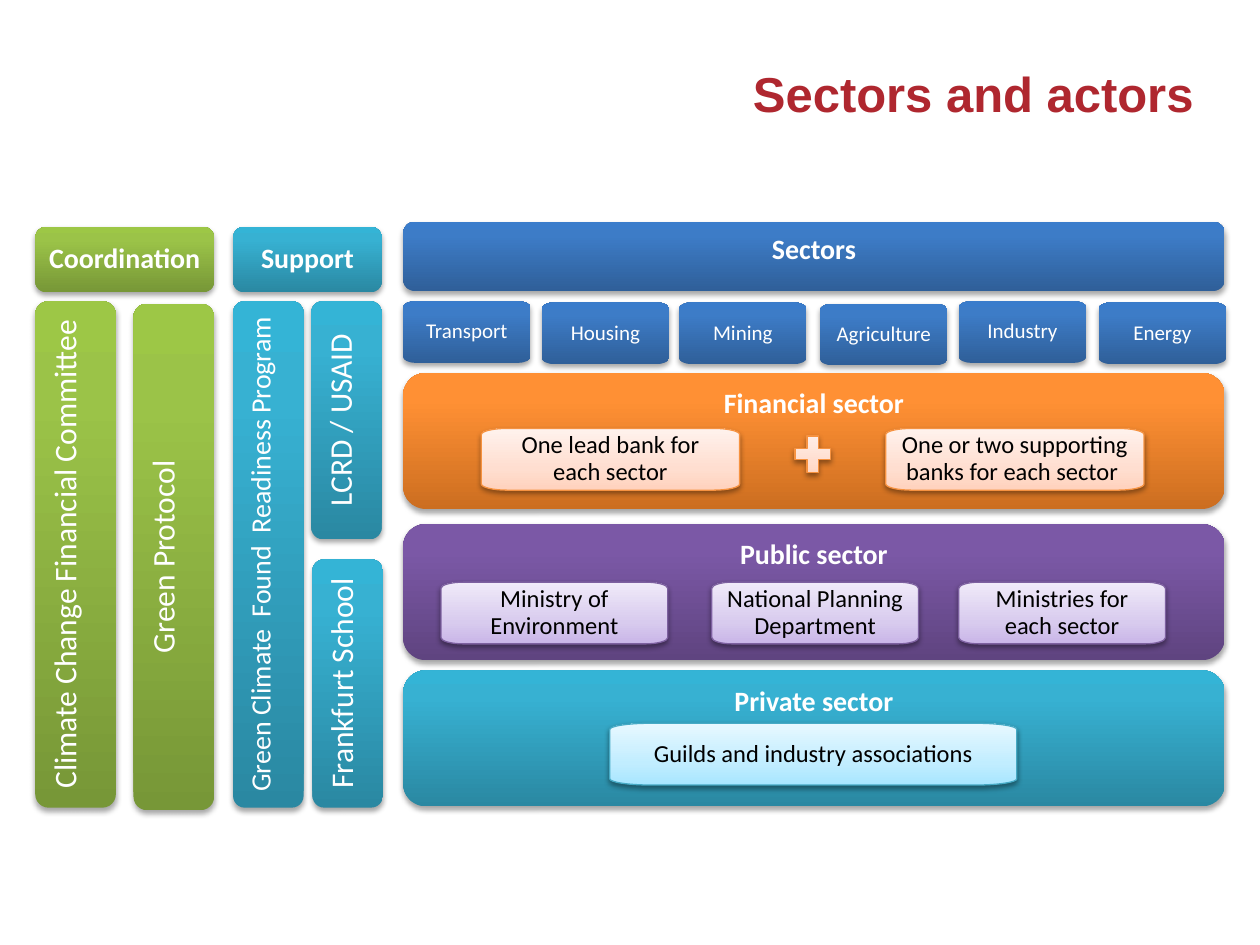
from copy import deepcopy

from lxml.etree import SubElement
from pptx import Presentation
from pptx.dml.color import RGBColor
from pptx.enum.shapes import MSO_SHAPE
from pptx.enum.text import MSO_ANCHOR, PP_ALIGN
from pptx.oxml.ns import qn
from pptx.util import Inches, Pt

WHITE = RGBColor(0xFF, 0xFF, 0xFF)
BLACK = RGBColor(0x00, 0x00, 0x00)
RED = RGBColor(0xAF, 0x27, 0x2F)


def blend(stops, *tones):
    return [(stop, RGBColor.from_string(tone)) for stop, tone in zip(stops, tones)]


DARK = (0, 0.8, 1)
PALE = (0, 0.35, 1)
BLUE = blend(DARK, "2F5F99", "3D7CC7", "3A7CCB")
ORANGE = blend(DARK, "CC6E20", "FF9034", "FF9136")
PURPLE = blend(DARK, "5F4480", "7B58A6", "7C57A8")
TEAL = blend(DARK, "2A88A2", "37B1D2", "34B4D6")
GREEN = blend(DARK, "779737", "9BC348", "9DC746")
PEACH = blend(PALE, "FFD2BD", "FFDED0", "FFF2ED")
LILAC = blend(PALE, "C9B5E8", "D8CBEE", "F0EAF9")
SKY = blend(PALE, "A7E6FF", "C1EDFF", "E7F8FF")
EDGE_ORANGE = RGBColor(0xF6, 0x92, 0x40)
EDGE_PURPLE = RGBColor(0x7D, 0x60, 0xA0)
EDGE_TEAL = RGBColor(0x46, 0xAA, 0xC5)

PANEL_X, PANEL_W, PANEL_H = 3.2, 6.52, 1.08
TILE_W, TILE_H = 1.01, 0.49
BEND = 0.55  # pull of the curve towards a corner
SECTORS = [("Transport", 3.2, 2.39), ("Housing", 4.3, 2.4), ("Mining", 5.39, 2.4),
           ("Agriculture", 6.51, 2.41), ("Industry", 7.61, 2.39), ("Energy", 8.72, 2.4)]
# Heading, top, panel fill, box fill, box edge, box top, boxes (text, left, width)
PANELS = [
    ("Financial sector", 2.96, ORANGE, PEACH, EDGE_ORANGE, 3.4,
     [("One lead bank for each sector", 3.82, 2.05),
      ("One or two supporting banks for each sector ", 7.03, 2.05)]),
    ("Public sector", 4.16, PURPLE, LILAC, EDGE_PURPLE, 4.62,
     [("Ministry of Environment", 3.5, 1.8),
      ("National Planning Department", 5.65, 1.64),
      ("Ministries for each sector", 7.61, 1.64)]),
    ("Private sector", 5.32, TEAL, SKY, EDGE_TEAL, 5.74,
     [("Guilds and industry associations", 4.84, 3.23)]),
]
HEADS = [("Coordination", GREEN, 0.28, 1.42), ("Support", TEAL, 1.85, 1.18)]
COLUMNS = [
    ("Climate Change Financial Committee", GREEN, 18, (0.28, 2.39, 0.64, 4.02)),
    ("Green Protocol", GREEN, 18, (1.06, 2.41, 0.64, 4.02)),
    ("Green Climate  Found  Readiness Program", TEAL, 16, (1.85, 2.39, 0.56, 4.02)),
    ("LCRD / USAID", TEAL, 18, (2.47, 2.39, 0.56, 1.89)),
    ("Frankfurt School", TEAL, 18, (2.48, 4.44, 0.56, 1.97)),
]


def apply(item, **values):
    for name, value in values.items():
        setattr(item, name, value)


def paint(shape, tones, edge=None):
    """Give a shape its gradient, edge and soft shadow below."""
    fill = shape.fill
    fill.gradient()
    fill.gradient_angle = 90
    stops = shape.element.spPr.find(qn("a:gradFill")).find(qn("a:gsLst"))
    stops.append(deepcopy(stops[-1]))
    for stop, (place, tone) in zip(fill.gradient_stops, tones):
        stop.position = place
        stop.color.rgb = tone
    if edge is None:
        shape.line.fill.background()
    else:
        shape.line.color.rgb = edge
        shape.line.width = Pt(0.75)
    shape.shadow.inherit = False
    effects = shape.element.spPr.find(qn("a:effectLst"))
    cast = SubElement(effects, qn("a:outerShdw"), blurRad=str(Pt(3.1)),
                      dist=str(Pt(1.6 if edge else 1.8)), dir="5400000", rotWithShape="0")
    tint = SubElement(cast, qn("a:srgbClr"), val="000000")
    SubElement(tint, qn("a:alpha"), val="38000" if edge else "35000")


def write(shape, text, size, inset, tone=WHITE, bold=False, middle=False):
    frame = shape.text_frame
    pad = Inches(inset)
    apply(frame, text=text, word_wrap=True,
          vertical_anchor=MSO_ANCHOR.MIDDLE if middle else MSO_ANCHOR.TOP,
          margin_left=pad, margin_right=pad, margin_top=pad, margin_bottom=pad)
    para = frame.paragraphs[0]
    apply(para, alignment=PP_ALIGN.CENTER, line_spacing=0.9, space_after=Pt(0.35 * size))
    apply(para.runs[0].font, name="Calibri", size=Pt(size), bold=bold)
    para.runs[0].font.color.rgb = tone


def add_bar(slide, box, tones, text, size, **style):
    bar = slide.shapes.add_shape(MSO_SHAPE.ROUNDED_RECTANGLE, *map(Inches, box))
    paint(bar, tones)
    write(bar, text, size, 0.08, **style)
    return bar


def curve(shape):
    """Turn every other line of the outline into a curve around its corner."""
    track = next(shape.element.iter(qn("a:path")))
    ends = [(int(pt.get("x")), int(pt.get("y"))) for pt in track.iter(qn("a:pt"))]
    lines = track.findall(qn("a:lnTo"))
    for spot in range(0, 8, 2):
        start, end = ends[spot], ends[spot + 1]
        corner = (start[0], end[1]) if spot % 4 == 0 else (end[0], start[1])
        pulls = [[round(a + BEND * (c - a)) for a, c in zip(point, corner)]
                 for point in (start, end)]
        line = lines[spot]
        line.tag = qn("a:cubicBezTo")
        line.clear()
        for x, y in (*pulls, end):
            SubElement(line, qn("a:pt"), x=str(x), y=str(y))


def add_tile(slide, box, tones, text, size, tone=WHITE, edge=None):
    """Add a box whose corners are quarter ellipses, a tenth of each side."""
    left, top, width, height = box
    right, base = left + width, top + height
    rx, ry = width / 10, height / 10
    marks = [(left, top + ry), (left + rx, top), (right - rx, top), (right, top + ry),
             (right, base - ry), (right - rx, base), (left + rx, base), (left, base - ry)]
    points = [(Inches(x), Inches(y)) for x, y in marks]
    path = slide.shapes.build_freeform(*points[0])
    path.add_line_segments(points[1:] + points[:1], close=True)
    tile = path.convert_to_shape()
    curve(tile)
    paint(tile, tones, edge)
    write(tile, text, size, 0.11, tone=tone, middle=True)


def add_title(slide):
    title = slide.shapes.add_textbox(*map(Inches, (3.22, 0.45, 6.35, 0.57)))
    apply(title.text_frame, text="Sectors and actors", word_wrap=True,
          vertical_anchor=MSO_ANCHOR.MIDDLE)
    para = title.text_frame.paragraphs[0]
    para.alignment = PP_ALIGN.RIGHT
    apply(para.runs[0].font, name="Arial", size=Pt(28), bold=True)
    para.runs[0].font.color.rgb = RED


def add_sectors(slide):
    add_bar(slide, (PANEL_X, 1.76, PANEL_W, 0.55), BLUE, "Sectors", 16, bold=True)
    for name, left, top in SECTORS:
        add_tile(slide, (left, top, TILE_W, TILE_H), BLUE, name, 12)


def add_panels(slide):
    for head, top, dark, pale, edge, row, boxes in PANELS:
        add_bar(slide, (PANEL_X, top, PANEL_W, PANEL_H), dark, head, 16, bold=True)
        for text, left, width in boxes:
            add_tile(slide, (left, row, width, TILE_H), pale, text, 14, BLACK, edge)
    plus = slide.shapes.add_shape(MSO_SHAPE.MATH_PLUS, *map(Inches, (6.26, 3.41, 0.38, 0.39)))
    paint(plus, PEACH, EDGE_ORANGE)


def add_columns(slide):
    for text, tones, left, width in HEADS:
        add_bar(slide, (left, 1.8, width, 0.52), tones, text, 16, bold=True, middle=True)
    for text, tones, size, box in COLUMNS:
        bar = add_bar(slide, box, tones, text, size)
        bar.element.txBody.find(qn("a:bodyPr")).set("vert", "vert270")


def main():
    deck = Presentation()
    apply(deck, slide_width=Inches(10), slide_height=Inches(7.5))
    slide = deck.slides.add_slide(deck.slide_layouts[6])
    add_title(slide)
    add_sectors(slide)
    add_panels(slide)
    add_columns(slide)
    deck.save("out.pptx")


if __name__ == "__main__":
    main()
